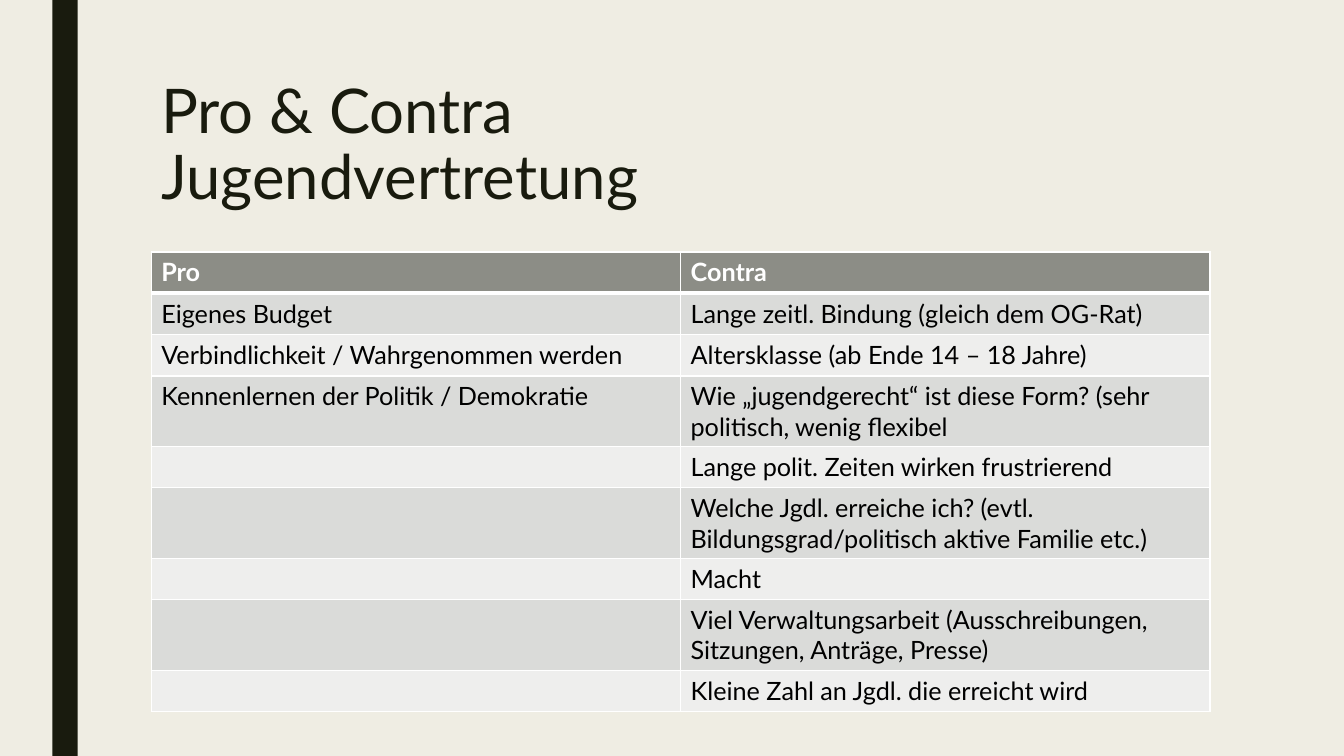
"""Build the slide weighing the pros and cons of a youth council."""
from dataclasses import dataclass
from itertools import zip_longest

import lxml.etree
import pptx
import pptx.dml.color
import pptx.enum.shapes
import pptx.enum.text
import pptx.oxml.ns
import pptx.util


@dataclass(frozen=True)
class Theme:
    font: str = "Lato"
    background: str = "EFEDE3"
    ink: str = "191B0E"
    header: str = "8C8D86"
    bands: tuple[str, str] = ("DADBD9", "EEEEED")
    body: str = "000000"
    white: str = "FFFFFF"
    title_size: int = 44
    table_size: int = 18
    thin: int = 1
    thick: int = 3


@dataclass(frozen=True)
class Area:
    col: float
    row: float
    cols: float
    rows: float

    def box(self) -> tuple[int, int, int, int]:
        return tuple(unit(n) for n in (self.col, self.row, self.cols, self.rows))


@dataclass(frozen=True)
class CellStyle:
    fill: str
    color: str
    bold: bool
    top: int
    bottom: int


THEME = Theme()
GRID = 0.25
RAIL = Area(2.08, 0, 1, 30)
TITLE = Area(6, 3, 42, 6.48)
TABLE = Area(6, 10, 42, 14.76)
HEADINGS = ("Pro", "Contra")
PROS = (
    "Eigenes Budget",
    "Verbindlichkeit / Wahrgenommen werden",
    "Kennenlernen der Politik / Demokratie",
)
CONS = (
    "Lange zeitl. Bindung (gleich dem OG-Rat)",
    "Altersklasse (ab Ende 14 – 18 Jahre)",
    "Wie „jugendgerecht“ ist diese Form? (sehr politisch, wenig flexibel",
    "Lange polit. Zeiten wirken frustrierend",
    "Welche Jgdl. erreiche ich? (evtl. Bildungsgrad/politisch aktive Familie etc.)",
    "Macht",
    "Viel Verwaltungsarbeit (Ausschreibungen, Sitzungen, Anträge, Presse)",
    "Kleine Zahl an Jgdl. die erreicht wird",
)


def unit(n: float) -> int:
    return pptx.util.Inches(n * GRID)


def rgb(value: str) -> pptx.dml.color.RGBColor:
    return pptx.dml.color.RGBColor.from_string(value)


def paint(fill, color: str) -> None:
    fill.solid()
    fill.fore_color.rgb = rgb(color)


def format_runs(tf, size: int, color: str, bold: bool = False) -> None:
    for p in tf.paragraphs:
        for r in p.runs:
            r.font.name = THEME.font
            r.font.size = pptx.util.Pt(size)
            r.font.bold = bold
            r.font.color.rgb = rgb(color)


def add_rail(slide) -> None:
    sp = slide.shapes.add_shape(pptx.enum.shapes.MSO_SHAPE.RECTANGLE, *RAIL.box())
    sp.shadow.inherit = False
    paint(sp.fill, THEME.ink)
    sp.line.fill.background()


def set_title(slide, text: str) -> None:
    sp = slide.shapes.title
    sp.left, sp.top, sp.width, sp.height = TITLE.box()
    tf = sp.text_frame
    tf.text = text
    tf.word_wrap = True
    tf.auto_size = pptx.enum.text.MSO_AUTO_SIZE.NONE
    tf.vertical_anchor = pptx.enum.text.MSO_ANCHOR.TOP
    p = tf.paragraphs[0]
    p.alignment = pptx.enum.text.PP_ALIGN.LEFT
    p.line_spacing = 0.89
    format_runs(tf, THEME.title_size, THEME.ink)


def add_borders(cell, top: int, bottom: int) -> None:
    qn = pptx.oxml.ns.qn
    tc_pr = cell._tc.get_or_add_tcPr()
    widths = {"lnL": THEME.thin, "lnR": THEME.thin, "lnT": top, "lnB": bottom}
    for side, width in widths.items():
        ln = lxml.etree.SubElement(tc_pr, qn(f"a:{side}"), w=str(pptx.util.Pt(width)))
        solid = lxml.etree.SubElement(ln, qn("a:solidFill"))
        lxml.etree.SubElement(solid, qn("a:srgbClr"), val=THEME.white)


def row_style(index: int) -> CellStyle:
    if index == 0:
        return CellStyle(THEME.header, THEME.white, True, THEME.thin, THEME.thick)
    top = THEME.thick if index == 1 else THEME.thin
    return CellStyle(THEME.bands[(index - 1) % 2], THEME.body, False, top, THEME.thin)


def fill_cell(cell, text: str, style: CellStyle) -> None:
    add_borders(cell, style.top, style.bottom)
    paint(cell.fill, style.fill)
    if text:
        cell.text_frame.text = text
        format_runs(cell.text_frame, THEME.table_size, style.color, style.bold)


def add_comparison(slide) -> None:
    rows = [HEADINGS, *zip_longest(PROS, CONS, fillvalue="")]
    table = slide.shapes.add_table(len(rows), len(HEADINGS), *TABLE.box()).table
    for i, texts in enumerate(rows):
        for j, text in enumerate(texts):
            fill_cell(table.cell(i, j), text, row_style(i))


def main() -> None:
    prs = pptx.Presentation()
    prs.slide_width = pptx.util.Inches(13.33)
    prs.slide_height = pptx.util.Inches(7.5)
    slide = prs.slides.add_slide(prs.slide_layouts.get_by_name("Title Only"))
    paint(slide.background.fill, THEME.background)
    add_rail(slide)
    set_title(slide, "Pro & Contra\vJugendvertretung")
    add_comparison(slide)
    prs.save("out.pptx")


if __name__ == "__main__":
    main()
